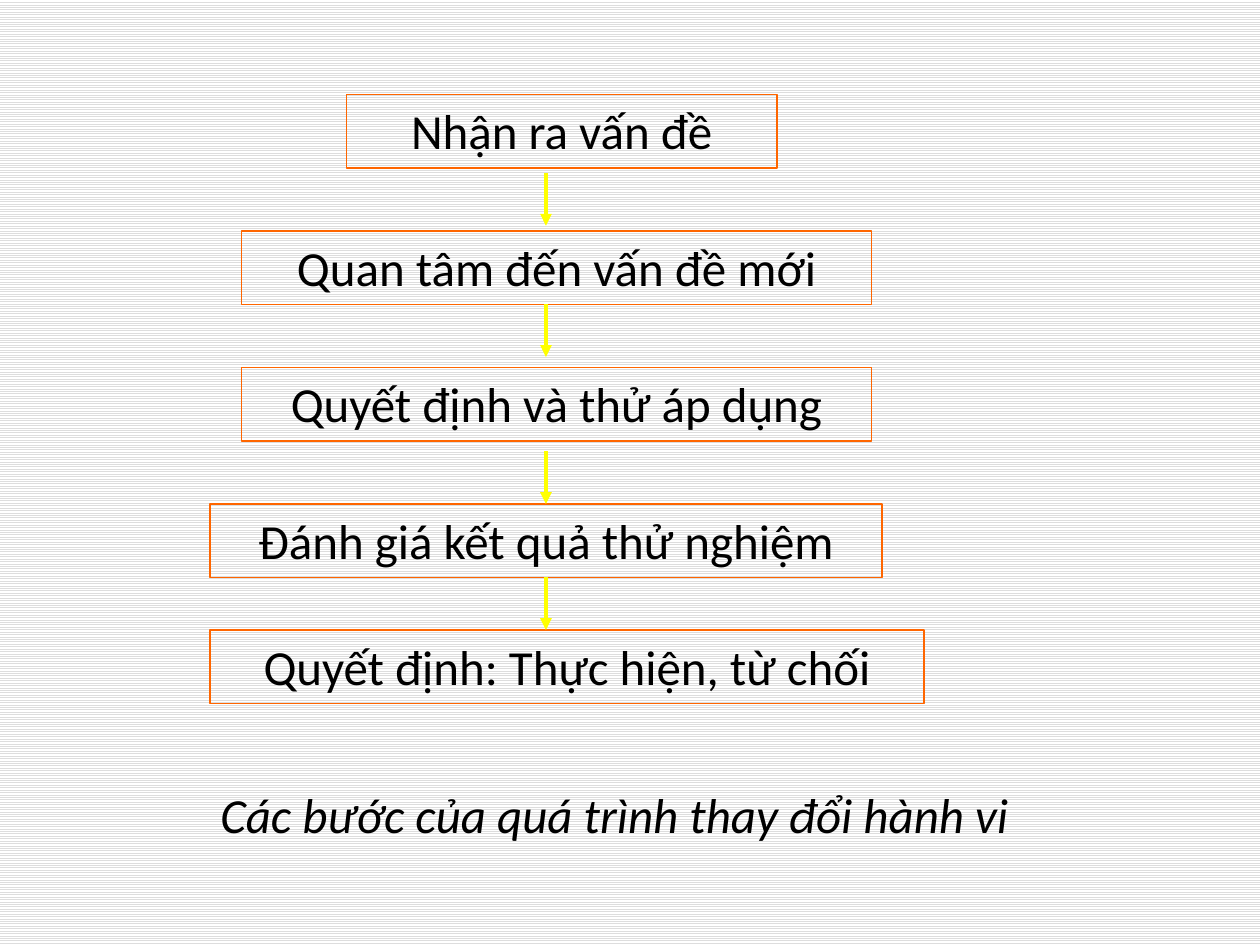
from lxml.etree import SubElement
from pptx import Presentation
from pptx.dml.color import RGBColor
from pptx.enum.dml import MSO_PATTERN
from pptx.enum.shapes import MSO_CONNECTOR, MSO_SHAPE
from pptx.enum.text import MSO_ANCHOR, MSO_AUTO_SIZE, PP_ALIGN
from pptx.oxml.ns import qn
from pptx.util import Emu, Pt

EMU_PER_PX = 7620  # 120 px to the inch
BLACK = RGBColor(0x00, 0x00, 0x00)
WHITE = RGBColor(0xFF, 0xFF, 0xFF)
STRIPE_GRAY = RGBColor(0xDD, 0xDD, 0xDD)
ORANGE = RGBColor(0xFF, 0x66, 0x00)
YELLOW = RGBColor(0xFF, 0xFF, 0x00)

STEP_HEIGHT = 70
ARROW_LENGTH = 50
TOP, BOTTOM = 0, 2

# text, left, top and width, relative to the flow's box
STEPS = [
    ("Nhận ra vấn đề", 130, 0, 410),
    ("Quan tâm đến vấn đề mới", 30, 130, 600),
    ("Quyết định và thử áp dụng", 30, 260, 600),
    ("Đánh giá kết quả thử nghiệm", 0, 390, 640),
    ("Quyết định: Thực hiện, từ chối", 0, 510, 680),
]
ARROW_X = 320
ARROW_TOPS = [75, 200, 340, 460]


def px(value):
    return Emu(value * EMU_PER_PX)


def write_text(shape, text, *, size=28, italic=False, anchor=MSO_ANCHOR.TOP,
               auto_size=MSO_AUTO_SIZE.NONE):
    frame = shape.text_frame
    frame.word_wrap = True
    frame.auto_size = auto_size
    frame.vertical_anchor = anchor
    paragraph = frame.paragraphs[0]
    paragraph.alignment = PP_ALIGN.CENTER
    run = paragraph.add_run()
    run.text = text
    run.font.name = "Calibri"
    run.font.size = Pt(size)
    run.font.italic = italic
    run.font.color.rgb = BLACK


def add_step(slide, text, left, top, width):
    shape = slide.shapes.add_shape(
        MSO_SHAPE.RECTANGLE, px(left), px(top), px(width), px(STEP_HEIGHT))
    shape.shadow.inherit = False
    shape.fill.background()
    shape.line.color.rgb = ORANGE
    shape.line.width = Pt(1)
    write_text(shape, text, auto_size=MSO_AUTO_SIZE.SHAPE_TO_FIT_TEXT)
    return shape


def add_down_arrow(slide, x, top):
    arrow = slide.shapes.add_connector(
        MSO_CONNECTOR.STRAIGHT, px(x), px(top), px(x), px(top + ARROW_LENGTH))
    arrow.line.color.rgb = YELLOW
    arrow.line.width = Pt(2.25)
    SubElement(arrow.line._get_or_add_ln(), qn("a:tailEnd"), type="triangle")
    SubElement(arrow._element.spPr, qn("a:effectLst"))
    return arrow


def add_flow(slide, left, top):
    """Place the steps and the arrows between them, from the box's corner."""
    steps = [add_step(slide, text, left + x, top + y, width)
             for text, x, y, width in STEPS]
    arrows = [add_down_arrow(slide, left + ARROW_X, top + y)
              for y in ARROW_TOPS]
    # Only the evaluation step is centred on the arrows' axis.
    evaluation = steps[3]
    arrows[2].end_connect(evaluation, TOP)
    arrows[3].begin_connect(evaluation, BOTTOM)


def add_caption(slide, left, top, width, height):
    caption = slide.shapes.add_textbox(px(left), px(top), px(width), px(height))
    write_text(caption, "Các bước của quá trình thay đổi hành vi",
               italic=True, anchor=MSO_ANCHOR.MIDDLE)


def fill_background(slide):
    fill = slide.background.fill
    fill.patterned()
    fill.pattern = MSO_PATTERN.LIGHT_HORIZONTAL
    fill.fore_color.rgb = STRIPE_GRAY
    fill.back_color.rgb = WHITE


def main():
    presentation = Presentation()
    presentation.slide_width = px(1200)
    presentation.slide_height = px(900)
    slide = presentation.slides.add_slide(presentation.slide_layouts[6])
    fill_background(slide)
    add_caption(slide, 90, 720, 990, 110)
    add_flow(slide, 200, 90)
    presentation.save("out.pptx")


if __name__ == "__main__":
    main()
